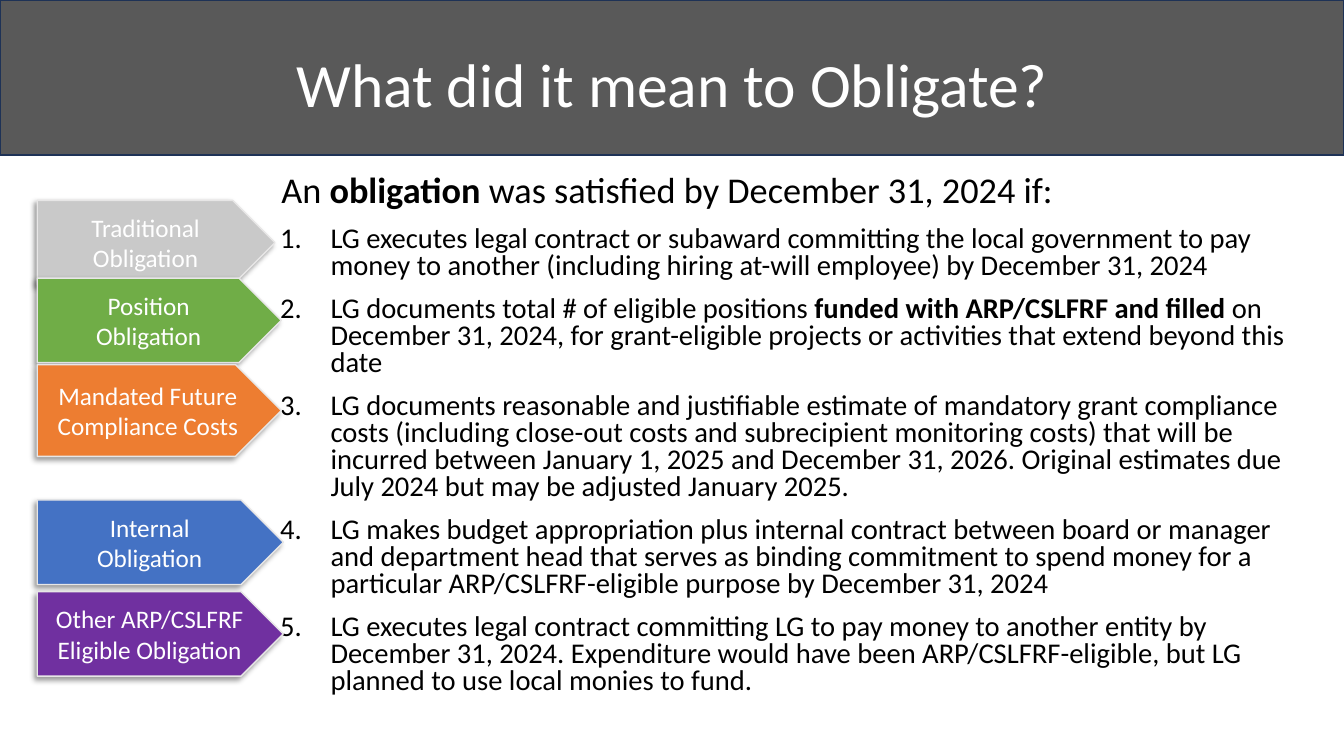
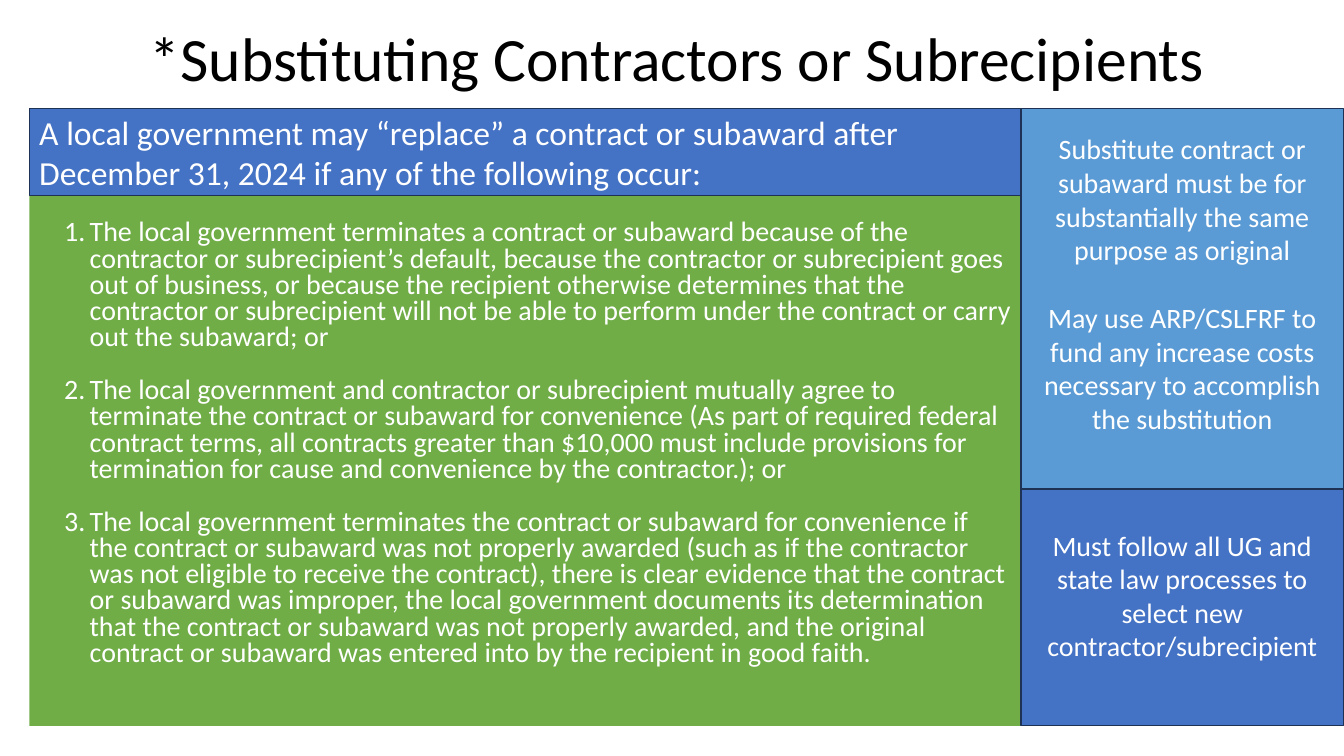
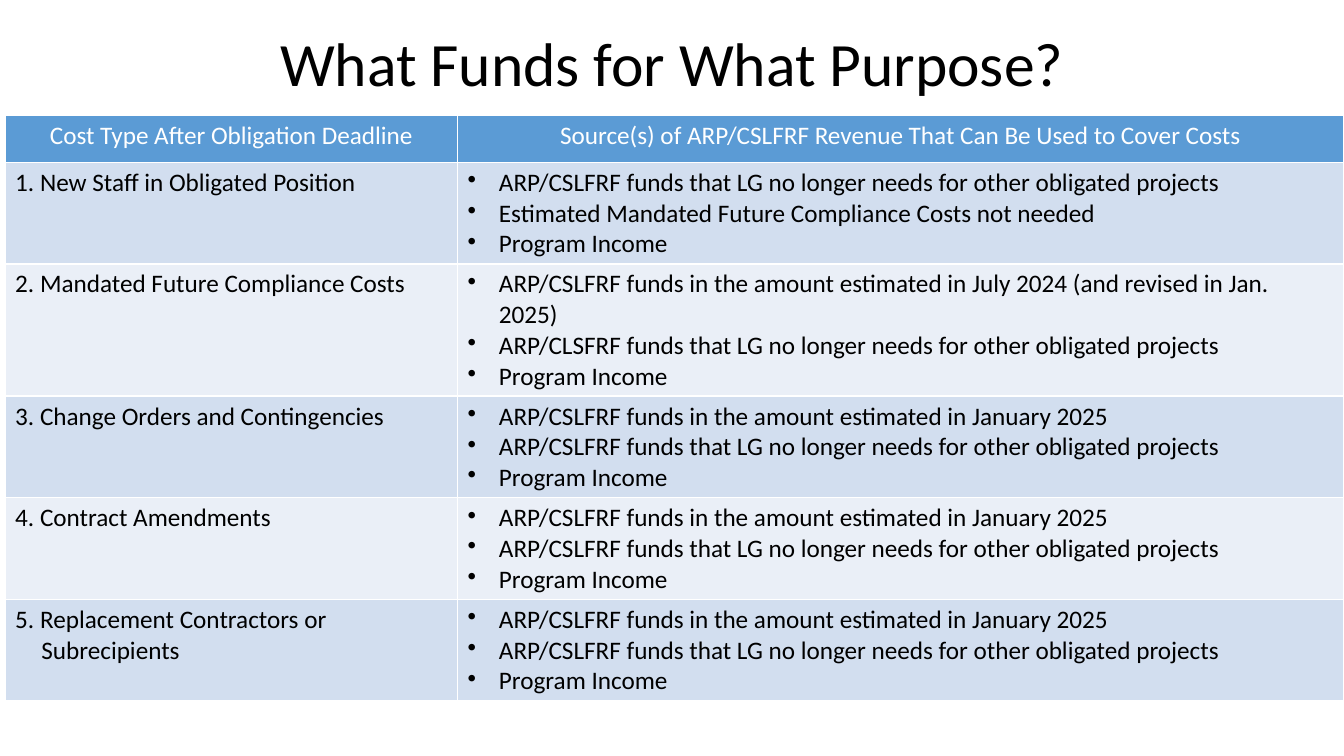
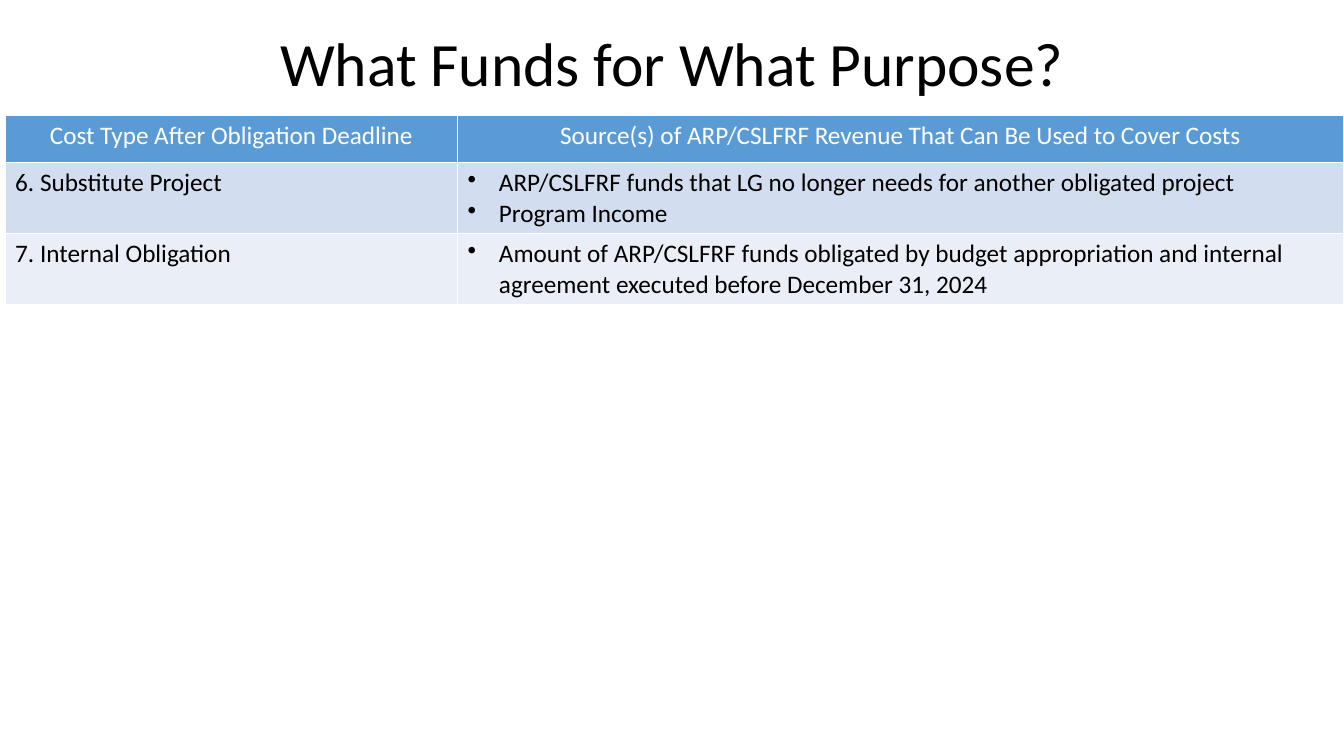
"""Build four slides on obligating and spending grant funds."""
import math

import pptx
import pptx.dml.color
import pptx.enum.shapes
import pptx.enum.text
import pptx.oxml
import pptx.oxml.ns
import pptx.util
from pptx.util import Cm, Pt

FONT = "Calibri"
HUES = {
    "white": "FFFFFF", "black": "000000", "band": "595959", "edge": "1E3256",
    "rim": "E7E6E6", "grey": "C9C9C9", "green": "70AD47", "orange": "ED7D31",
    "blue": "4472C4", "purple": "7030A0", "sky": "5B9BD5",
    "odd": "D2DEEF", "even": "EAEFF7",
}
KINDS = pptx.enum.shapes.MSO_SHAPE
ALIGN = pptx.enum.text.PP_ALIGN
ANCHOR = pptx.enum.text.MSO_ANCHOR

WIDE, HIGH = 33.87, 19.05
DOT = '<a:buChar {} char="•"/>'
COUNT = '<a:buAutoNum {} type="arabicPeriod"/>'

LEAD = ["An ", ("obligation ",), "was satisfied by December 31, 2024 if:"]
WAYS = [
    ["LG executes legal contract or subaward committing the local government to pay money "
     "to another (including hiring at-will employee) by December 31, 2024"],
    ["LG documents total # of eligible positions ", ("funded with ARP/CSLFRF and filled ",),
     "on December 31, 2024, for grant-eligible projects or activities that extend beyond this date"],
    ["LG documents reasonable and justifiable estimate of mandatory grant compliance costs "
     "(including close-out costs and subrecipient monitoring costs) that will be incurred between "
     "January 1, 2025 and December 31, 2026. Original estimates due July 2024 but may be adjusted "
     "January 2025."],
    ["LG makes budget appropriation plus internal contract between board or manager and department "
     "head that serves as binding commitment to spend money for a particular ARP/CSLFRF-eligible "
     "purpose by December 31, 2024"],
    ["LG executes legal contract committing LG to pay money to another entity by December 31, 2024. "
     "Expenditure would have been ARP/CSLFRF-eligible, but LG planned to use local monies to fund."],
]
TAGS = [
    (["Traditional Obligation"], "grey", 5.05, 5.99, 2.13),
    (["Position", "Obligation"], "green", 7.01, 6.15, 2.13),
    (["Mandated Future Compliance Costs"], "orange", 9.19, 6.15, 2.31),
    (["Internal", "Obligation"], "blue", 12.6, 6.2, 2.13),
    (["Other ARP/CSLFRF Eligible Obligation"], "purple", 14.91, 6.2, 2.13),
]

CLAIM = ("A local government may “replace” a contract or subaward after December 31, 2024 "
         "if any of the following occur:")
CASES = [
    "The local government terminates a contract or subaward because of the contractor or "
    "subrecipient’s default, because the contractor or subrecipient goes out of business, or because "
    "the recipient otherwise determines that the contractor or subrecipient will not be able to "
    "perform under the contract or carry out the subaward; or",
    "The local government and contractor or subrecipient mutually agree to terminate the contract or "
    "subaward for convenience (As part of required federal contract terms, all contracts greater than "
    "$10,000 must include provisions for termination for cause and convenience by the contractor.); or",
    "The local government terminates the contract or subaward for convenience if the contract or "
    "subaward was not properly awarded (such as if the contractor was not eligible to receive the "
    "contract), there is clear evidence that the contract or subaward was improper, the local "
    "government documents its determination that the contract or subaward was not properly awarded, "
    "and the original contract or subaward was entered into by the recipient in good faith.",
]
RULES = [
    ("sky", 2.74, 9.58, 0.9, [
        "Substitute contract or subaward must be for substantially the same purpose as original",
        "May use ARP/CSLFRF to fund any increase costs necessary to accomplish the substitution"]),
    ("blue", 12.32, 5.97, 0.73, [
        "Must follow all UG and state law processes to select new contractor/subrecipient"]),
]

HEADS = ["Cost Type After Obligation Deadline",
         "Source(s) of ARP/CSLFRF Revenue That Can Be Used to Cover Costs"]
SPARE = "ARP/CSLFRF funds that LG no longer needs for other obligated projects"
GAIN = "Program Income"
LATE = ["ARP/CSLFRF funds in the amount estimated in January 2025", SPARE, GAIN]
FUNDS = [
    [
        ("1. New Staff in Obligated Position",
         [SPARE, "Estimated Mandated Future Compliance Costs not needed", GAIN]),
        ("2. Mandated Future Compliance Costs",
         ["ARP/CSLFRF funds in the amount estimated in July 2024 (and revised in Jan. 2025)",
          "ARP/CLSFRF funds that LG no longer needs for other obligated projects", GAIN]),
        ("3. Change Orders and Contingencies", LATE),
        ("4. Contract Amendments", LATE),
        ("5. Replacement Contractors or Subrecipients", LATE),
    ],
    [
        ("6. Substitute Project",
         ["ARP/CSLFRF funds that LG no longer needs for another obligated project", GAIN]),
        ("7. Internal Obligation",
         ["Amount of ARP/CSLFRF funds obligated by budget appropriation and internal agreement "
          "executed before December 31, 2024"]),
    ],
]


def tint(name):
    return pptx.dml.color.RGBColor.from_string(HUES[name])


def node(text):
    return pptx.oxml.parse_xml(text.format(pptx.oxml.ns.nsdecls("a")))


def write(frame, parts, size, hue="white", align=ALIGN.LEFT, space=None, gap=0,
          left=0, hang=0, mark=None, more=False):
    """Write each part as a paragraph; a run inside a tuple is bold."""
    for spot, part in enumerate(parts):
        para = frame.add_paragraph() if more or spot else frame.paragraphs[0]
        para.alignment = align
        if space:
            para.line_spacing = space
        if gap and (more or spot):
            para.space_before = Pt(gap)
        props = para._p.get_or_add_pPr()
        if left:
            props.set("marL", str(Cm(left)))
            props.set("indent", str(Cm(hang)))
        if mark:
            props.append(node(mark))
        for item in [part] if isinstance(part, str) else part:
            run = para.add_run()
            run.text = item if isinstance(item, str) else item[0]
            run.font.name = FONT
            run.font.size = Pt(size)
            run.font.bold = not isinstance(item, str)
            run.font.color.rgb = tint(hue)


def text_box(slide, box, anchor=ANCHOR.TOP):
    frame = slide.shapes.add_textbox(*map(Cm, box)).text_frame
    frame.word_wrap = True
    frame.vertical_anchor = anchor
    return frame


def block(slide, box, fill, line=None, kind=KINDS.RECTANGLE, anchor=ANCHOR.MIDDLE):
    shape = slide.shapes.add_shape(kind, *map(Cm, box))
    shape.shadow.inherit = False
    shape.fill.solid()
    shape.fill.fore_color.rgb = tint(fill)
    if line:
        shape.line.color.rgb = tint(line)
        shape.line.width = Pt(1)
    else:
        shape.line.fill.background()
    shape.text_frame.word_wrap = True
    shape.text_frame.vertical_anchor = anchor
    return shape


def title(slide, text, left=2.34, top=-0.15, hue="black", align=ALIGN.CENTER):
    frame = text_box(slide, (left, top, 29.21, 3.68), ANCHOR.MIDDLE)
    write(frame, [text], 44, hue, align, space=0.9)


def cast(shape):
    """Give the shape a soft shadow to its lower left."""
    glow = shape._element.spPr.find(pptx.oxml.ns.qn("a:effectLst"))
    glow.append(node(
        f'<a:outerShdw {{}} blurRad="{Pt(4)}" dist="{Pt(3)}" dir="{135 * 60000}" rotWithShape="0">'
        f'<a:srgbClr val="{HUES["black"]}"><a:alpha val="40000"/></a:srgbClr></a:outerShdw>'))


def paint(cell, fill):
    """Fill the cell and rule its four sides in white."""
    cell.fill.solid()
    cell.fill.fore_color.rgb = tint(fill)
    props = cell._tc.get_or_add_tcPr()
    for spot, side in enumerate("LRTB"):
        props.insert(spot, node(
            f'<a:ln{side} {{}} w="{Pt(1)}"><a:solidFill><a:srgbClr val="{HUES["white"]}"/>'
            f'</a:solidFill></a:ln{side}>'))


def duty_slide(slide):
    block(slide, (0, 0, WIDE, 3.91), "band", "edge")
    title(slide, "What did it mean to Obligate?", top=0.36, hue="white")
    frame = text_box(slide, (5.54, 4.32, 27.41, 14.73))
    write(frame, [LEAD], 25.9, "black", space=0.78, left=1.3)
    write(frame, WAYS, 20.4, "black", space=0.78, gap=12, left=2.54, hang=-1.27,
          mark=COUNT, more=True)
    for label, fill, top, width, height in TAGS:
        tag = block(slide, (0.94, top, width, height), fill, "rim", KINDS.PENTAGON)
        cast(tag)
        write(tag.text_frame, label, 18, align=ALIGN.CENTER)


def swap_slide(slide):
    title(slide, "*Substituting Contractors or Subrecipients", 3.53, -0.28, align=ALIGN.LEFT)
    frame = block(slide, (0.74, 4.93, 25.04, 13.36), "green", anchor=ANCHOR.TOP).text_frame
    frame.margin_top = Cm(0.64)
    write(frame, CASES, 20, space=0.78, gap=19, left=1.27, hang=-0.64, mark=COUNT)
    write(block(slide, (0.74, 2.74, 25, 2.19), "blue", "edge").text_frame, [CLAIM], 24)
    for fill, top, height, foot, parts in RULES:
        frame = block(slide, (25.73, top, 8.13, height), fill, "edge").text_frame
        frame.margin_bottom = Cm(foot)
        write(frame, parts, 20, align=ALIGN.CENTER, gap=24.4)


def fund_slide(slide, funds):
    title(slide, "What Funds for What Purpose?")
    lines = [sum(math.ceil(len(text) / 75) for text in items) for _, items in funds]
    tall = [1.17] + [0.25 + 0.77 * count for count in lines]
    cols = [11.4, 22.33]
    grid = slide.shapes.add_table(len(tall), len(cols), Cm(0.13), Cm(2.92),
                                  Cm(sum(cols)), Cm(sum(tall))).table
    grid.first_row = grid.horz_banding = False
    for col, width in zip(grid.columns, cols):
        col.width = Cm(width)
    for row, height in zip(grid.rows, tall):
        row.height = Cm(height)
    for spot, head in enumerate(HEADS):
        cell = grid.cell(0, spot)
        paint(cell, "sky")
        write(cell.text_frame, [head], 18, align=ALIGN.CENTER)
    for row, (cost, items) in enumerate(funds, 1):
        name, list_cell = grid.cell(row, 0), grid.cell(row, 1)
        for cell in (name, list_cell):
            paint(cell, "odd" if row % 2 else "even")
        write(name.text_frame, [cost], 18, "black", left=0.66, hang=-0.66)
        write(list_cell.text_frame, items, 18, "black", left=0.79, hang=-0.79, mark=DOT)


def main():
    deck = pptx.Presentation()
    deck.slide_width, deck.slide_height = Cm(WIDE), Cm(HIGH)
    blank = deck.slide_layouts[6]
    duty_slide(deck.slides.add_slide(blank))
    swap_slide(deck.slides.add_slide(blank))
    for funds in FUNDS:
        fund_slide(deck.slides.add_slide(blank), funds)
    deck.save("out.pptx")


if __name__ == "__main__":
    main()
